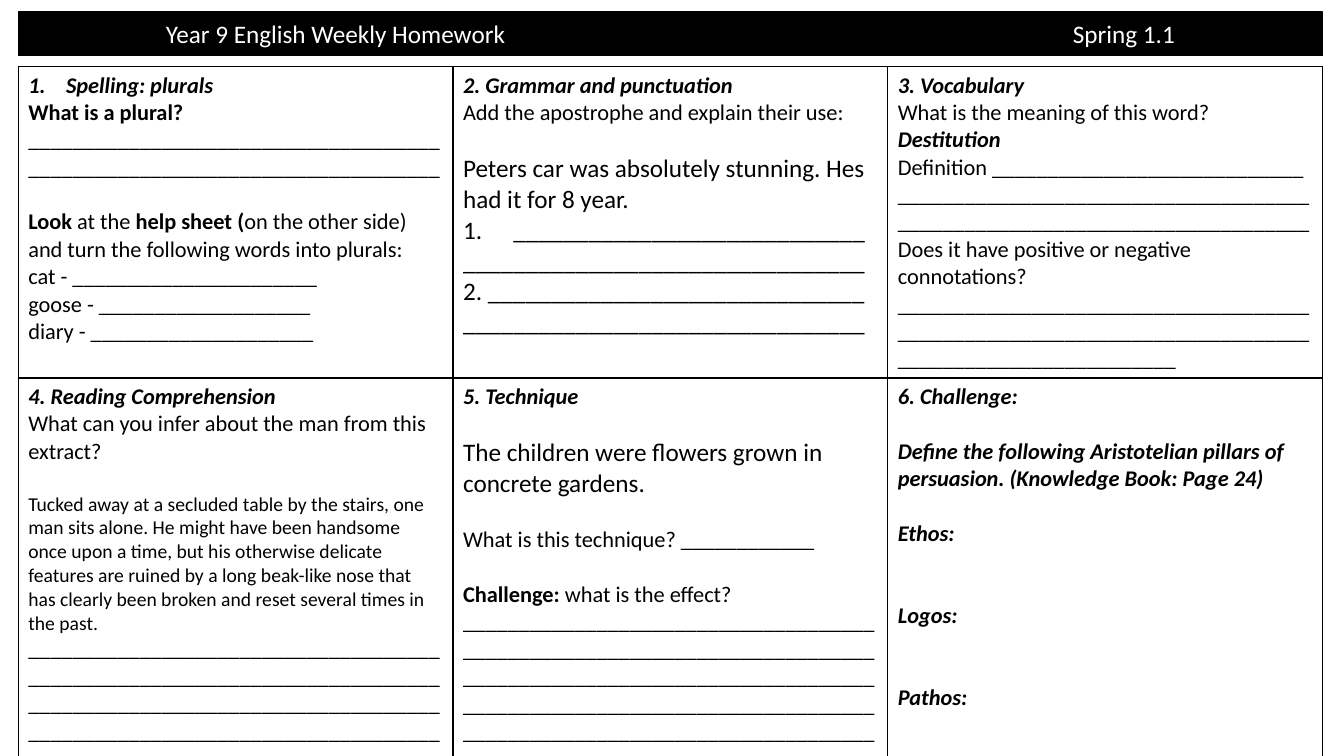
"""Build a one-page weekly English homework sheet."""
from dataclasses import dataclass

from lxml import etree
from pptx import Presentation
from pptx import util as u
from pptx.dml.color import RGBColor
from pptx.enum import shapes, text
from pptx.oxml import ns

COLOURS = {"ink": "000000", "paper": "FFFFFF"}
FONT = "Calibri"
BODY, LARGE, EXTRACT = 16, 18, 14
LINE_RATIO = 1.22
FULL_LINE = 37
LEFT, WIDTH = 0.46, 32.87
ROW_HEIGHTS = (7.16, 9.47)


@dataclass
class Para:
    """One paragraph: (text, style) runs, where style may hold b and i."""
    runs: list
    size: int = BODY
    gap: int = 0
    number_indent: float = 0


def plain(words, **options):
    """Return a paragraph in regular type."""
    return Para([(words, "")], **options)


def heading(words, **options):
    """Return a paragraph in bold italic type."""
    return Para([(words, "bi")], **options)


def blank(count):
    """Return a writing line of the given number of underscores."""
    return "_" * count


def full_lines(count):
    """Return enough underscores to fill whole lines of a cell."""
    return blank(FULL_LINE * count)


SPELLING = [
    heading("Spelling: plurals", number_indent=0.95),
    Para([("What is a plural?", "b")]),
    plain(full_lines(2)),
    Para([("Look", "b"), (" at the ", ""), ("help sheet (", "b"),
          ("on the other side) and turn the following words into plurals:", "")], gap=1),
    plain("cat - " + blank(22)),
    plain("goose - " + blank(19)),
    plain("diary - " + blank(20)),
]
GRAMMAR = [
    heading("2. Grammar and punctuation"),
    plain("Add the apostrophe and explain their use:"),
    plain("Peters car was absolutely stunning. Hes had it for 8 year.", size=LARGE, gap=1),
    plain(blank(28), size=LARGE, number_indent=1.27),
    plain(blank(32), size=LARGE),
    plain("2. " + blank(30), size=LARGE),
    plain(blank(32), size=LARGE),
]
VOCABULARY = [
    heading("3. Vocabulary"),
    plain("What is the meaning of this word?"),
    heading("Destitution"),
    plain("Definition " + blank(28) + " " + full_lines(2)),
    plain("Does it have positive or negative connotations?" + full_lines(2) + blank(25)),
]
READING = [
    heading("4. Reading Comprehension"),
    plain("What can you infer about the man from this extract?"),
    plain("Tucked away at a secluded table by the stairs, one man sits alone. "
          "He might have been handsome once upon a time, but his otherwise delicate "
          "features are ruined by a long beak-like nose that has clearly been broken "
          "and reset several times in the past.", size=EXTRACT, gap=1),
    plain(full_lines(5)),
]
TECHNIQUE = [
    heading("5. Technique"),
    plain("The children were flowers grown in concrete gardens.", size=LARGE, gap=1),
    plain("What is this technique? " + blank(12), gap=1),
    Para([("Challenge: ", "b"), ("what is the effect? " + full_lines(6), "")], gap=1),
]
CHALLENGE = [
    heading("6. Challenge:"),
    heading("Define the following Aristotelian pillars of persuasion. "
            "(Knowledge Book: Page 24)", gap=1),
    heading("Ethos:", gap=1),
    heading("Logos:", gap=2),
    heading("Pathos:", gap=2),
]
TASKS = [[SPELLING, GRAMMAR, VOCABULARY], [READING, TECHNIQUE, CHALLENGE]]


def add_run(line, words, size, colour, style=""):
    """Append one formatted run to a paragraph."""
    run = line.add_run()
    run.text = words
    run.font.name = FONT
    run.font.size = u.Pt(size)
    run.font.bold = "b" in style
    run.font.italic = "i" in style
    run.font.color.rgb = RGBColor.from_string(COLOURS[colour])


def number(line, indent):
    """Give a paragraph an automatic number and a hanging indent."""
    props = line._p.get_or_add_pPr()
    props.set("marL", str(u.Cm(indent)))
    props.set("indent", str(-u.Cm(indent)))
    etree.SubElement(props, ns.qn("a:buFont"), typeface="+mj-lt")
    etree.SubElement(props, ns.qn("a:buAutoNum"), type="arabicPeriod")


def write(frame, paras):
    """Fill a text frame with paragraphs."""
    for index, para in enumerate(paras):
        line = frame.add_paragraph() if index else frame.paragraphs[0]
        if para.gap:
            line.space_before = u.Pt(round(para.gap * BODY * LINE_RATIO, 1))
        if para.number_indent:
            number(line, para.number_indent)
        for words, style in para.runs:
            add_run(line, words, para.size, "ink", style)


def outline(cell):
    """Draw a thin border on all four sides of a cell."""
    props = cell._tc.get_or_add_tcPr()
    for side in ("lnL", "lnR", "lnT", "lnB"):
        border = etree.SubElement(props, ns.qn("a:" + side), w=str(u.Pt(1)))
        fill = etree.SubElement(border, ns.qn("a:solidFill"))
        etree.SubElement(fill, ns.qn("a:srgbClr"), val=COLOURS["ink"])


def add_banner(slide, title, term):
    """Add the black banner with the title and, at a tab stop, the term."""
    banner = slide.shapes.add_shape(shapes.MSO_SHAPE.RECTANGLE, u.Cm(LEFT), u.Cm(0.3),
                                    u.Cm(WIDTH), u.Cm(1.1))
    banner.shadow.inherit = False
    banner.fill.solid()
    banner.fill.fore_color.rgb = RGBColor.from_string(COLOURS["ink"])
    banner.line.color.rgb = RGBColor.from_string(COLOURS["ink"])
    banner.line.width = u.Pt(1)
    frame = banner.text_frame
    frame.word_wrap = True
    frame.margin_left = u.Cm(3.72)
    frame.vertical_anchor = text.MSO_ANCHOR.MIDDLE
    line = frame.paragraphs[0]
    line.alignment = text.PP_ALIGN.LEFT
    stops = etree.SubElement(line._p.get_or_add_pPr(), ns.qn("a:tabLst"))
    etree.SubElement(stops, ns.qn("a:tab"), pos=str(u.Cm(22.86)), algn="l")
    add_run(line, f"{title}\t{term}", LARGE, "paper")


def add_tasks(slide, tasks):
    """Add the grid of homework tasks."""
    grid = slide.shapes.add_table(len(tasks), len(tasks[0]), u.Cm(LEFT), u.Cm(1.68),
                                  u.Cm(WIDTH), u.Cm(sum(ROW_HEIGHTS))).table
    grid.first_row = False
    grid.horz_banding = False
    for row, height in zip(grid.rows, ROW_HEIGHTS):
        row.height = u.Cm(height)
    for row, row_tasks in zip(grid.rows, tasks):
        for cell, task in zip(row.cells, row_tasks):
            outline(cell)
            cell.fill.background()
            write(cell.text_frame, task)


def main():
    """Build and save the homework sheet."""
    deck = Presentation()
    deck.slide_width, deck.slide_height = u.Cm(33.87), u.Cm(19.05)
    slide = deck.slides.add_slide(deck.slide_layouts[6])
    add_banner(slide, "Year 9 English Weekly Homework", "Spring 1.1")
    add_tasks(slide, TASKS)
    deck.save("out.pptx")


if __name__ == "__main__":
    main()
